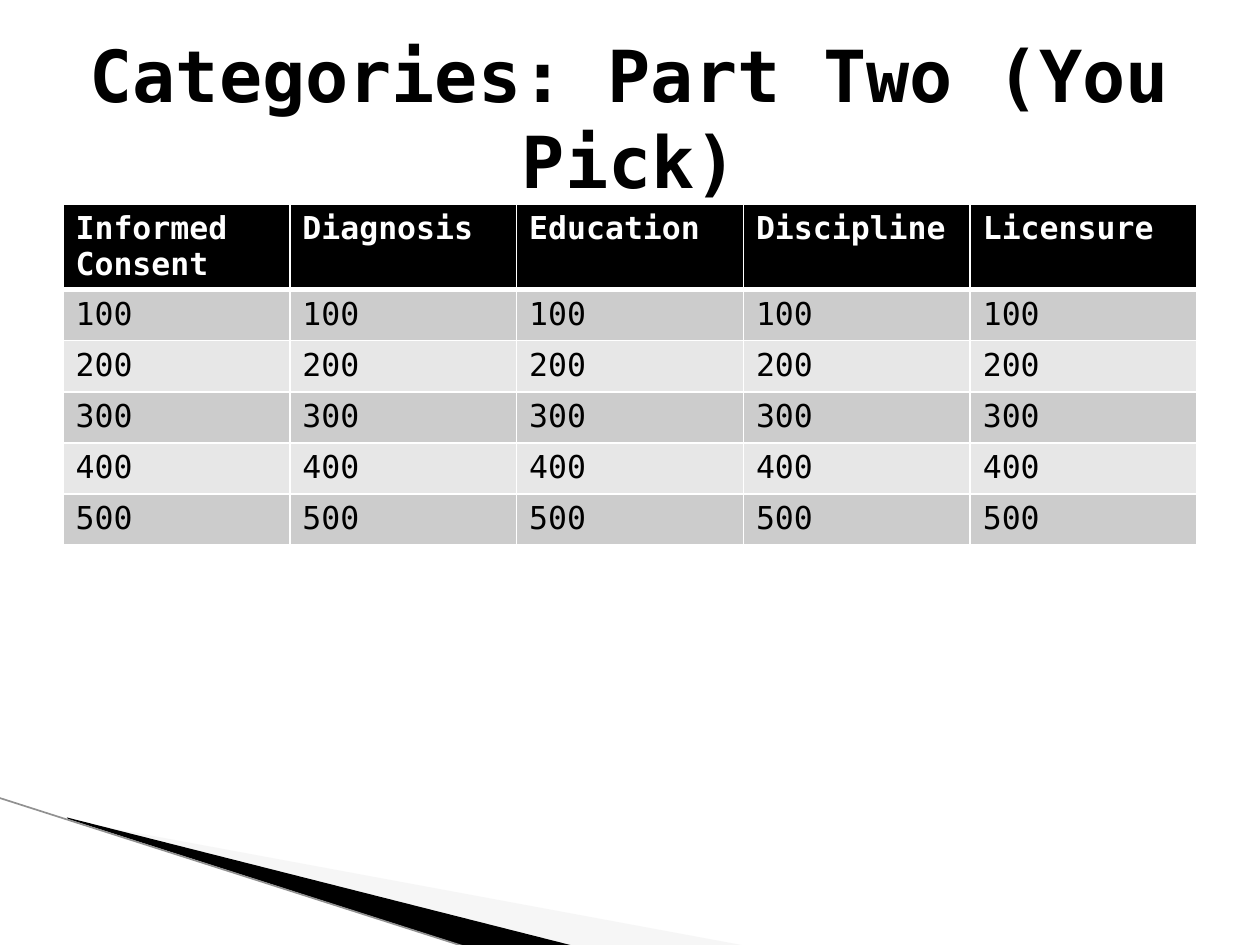
from lxml import etree
from pptx import Presentation
from pptx import util as u
from pptx.dml import color
from pptx.enum import shapes, text
from pptx.oxml import ns

FACE = "DejaVu Sans Mono"
HEADS = ["Informed Consent", "Diagnosis", "Education", "Discipline", "Licensure"]
SCORES = [100, 200, 300, 400, 500]


def tint(fmt, code):
    """Give a fill a solid hex colour."""
    fmt.solid()
    fmt.fore_color.rgb = color.RGBColor.from_string(code)


def style(para, code, **form):
    """Set the font of a paragraph from format values."""
    for key, val in {"name": FACE, **form}.items():
        setattr(para.font, key, val)
    tint(para.font.fill, code)


def wedge(slide, pts, code, alpha=100):
    """Draw a filled polygon through points given in centimetres."""
    spots = [(u.Cm(x), u.Cm(y)) for x, y in pts]
    pen = slide.shapes.build_freeform(*spots[0])
    pen.add_line_segments(spots[1:], close=True)
    shape = pen.convert_to_shape()
    shape.shadow.inherit = False
    shape.line.fill.background()
    tint(shape.fill, code)
    if alpha < 100:
        clr = shape.fill._xPr.find(".//" + ns.qn("a:srgbClr"))
        etree.SubElement(clr, ns.qn("a:alpha"), val=str(alpha * 1000))


def stroke(slide, start, end, code, width):
    """Draw a straight line between two points in centimetres."""
    ends = [u.Cm(v) for v in (*start, *end)]
    line = slide.shapes.add_connector(shapes.MSO_CONNECTOR.STRAIGHT, *ends)
    tint(line.line.fill, code)
    line.line.width = u.Pt(width)
    etree.SubElement(line._element.spPr, ns.qn("a:effectLst"))


def edge(cell, low):
    """Put white borders on a cell, with its own bottom and top widths."""
    props = cell._tc.get_or_add_tcPr()
    for spot, (side, width) in enumerate(low.items()):
        line = etree.Element(ns.qn("a:" + side), w=str(u.Pt(width)))
        fill = etree.SubElement(line, ns.qn("a:solidFill"))
        etree.SubElement(fill, ns.qn("a:srgbClr"), val="FFFFFF")
        props.insert(spot, line)


def board(slide):
    """Build the table of categories and scores."""
    rows = [HEADS] + [[str(n)] * len(HEADS) for n in SCORES]
    place = [u.Cm(v) for v in (1.27, 4.11, 22.86, 6.75)]
    table = slide.shapes.add_table(len(rows), len(HEADS), *place).table
    for r, row in enumerate(rows):
        head = r == 0
        table.rows[r].height = u.Cm(1.6 if head else 1.03)
        back = "000000" if head else ("CCCCCC" if r % 2 else "E7E7E7")
        sides = {"lnL": 1, "lnR": 1, "lnT": 3 if r == 1 else 1, "lnB": 3 if head else 1}
        for c, word in enumerate(row):
            cell = table.cell(r, c)
            cell.text = word
            tint(cell.fill, back)
            edge(cell, sides)
            style(cell.text_frame.paragraphs[0], "FFFFFF" if head else "000000",
                  size=u.Pt(18), bold=head)


def title(slide, words):
    """Add the centred slide title."""
    place = [u.Cm(v) for v in (1.27, 0.76, 22.86, 3.18)]
    frame = slide.shapes.add_textbox(*place).text_frame
    form = {"word_wrap": True, "vertical_anchor": text.MSO_ANCHOR.MIDDLE, "text": words}
    for key, val in form.items():
        setattr(frame, key, val)
    para = frame.paragraphs[0]
    para.alignment = text.PP_ALIGN.CENTER
    style(para, "000000", size=u.Pt(41), bold=True)


def main():
    """Build and save the slide."""
    deck = Presentation()
    deck.slide_width, deck.slide_height = u.Cm(25.4), u.Cm(19.05)
    slide = deck.slides.add_slide(deck.slide_layouts[6])
    wedge(slide, [(1.4, 16.54), (15.11, 19.08), (11.58, 19.08), (1.4, 16.51)], "EAEAEA", 40)
    wedge(slide, [(1.35, 16.48), (11.61, 19.08), (9.45, 19.1), (1.37, 16.51)], "000000")
    stroke(slide, (-0.03, 16.08), (9.42, 19.1), "919191", 0.95)
    board(slide)
    title(slide, "Categories: Part Two (You Pick)")
    deck.save("out.pptx")


if __name__ == "__main__":
    main()
